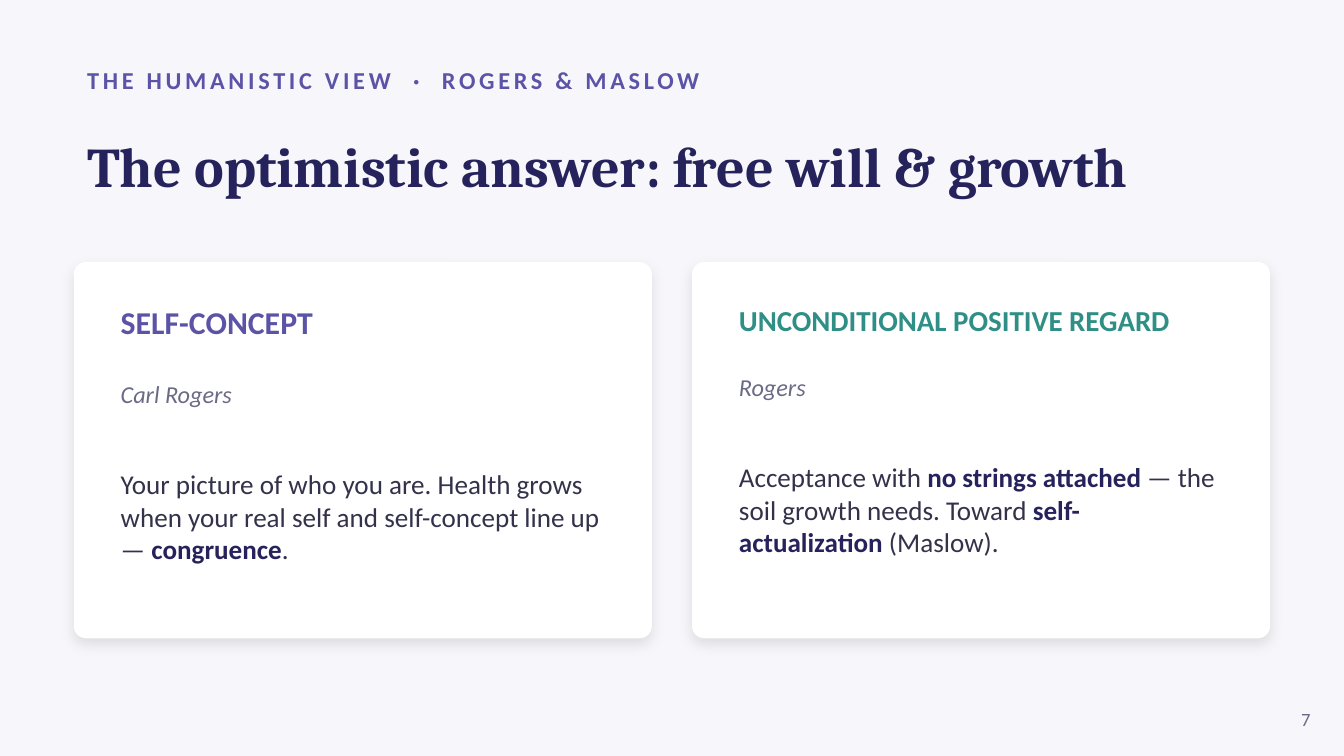
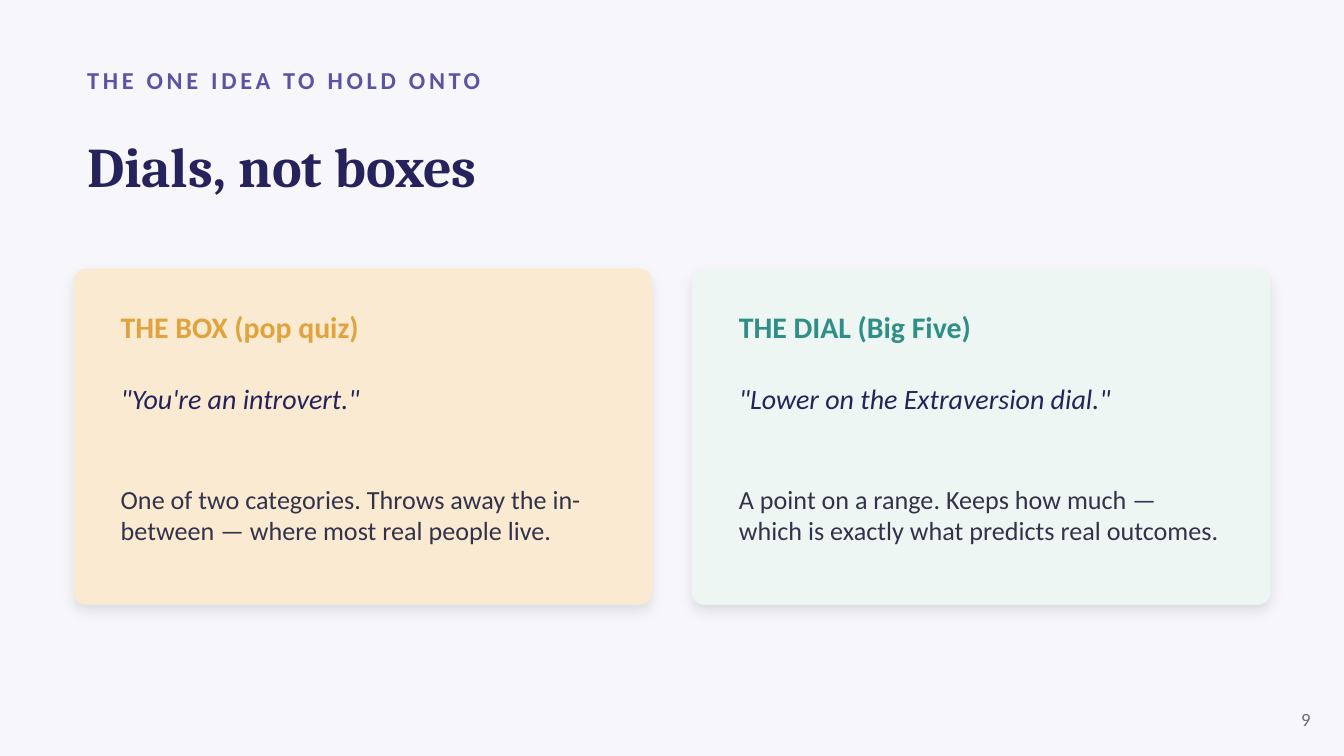
from dataclasses import dataclass

from lxml import etree
from pptx import Presentation
from pptx.dml.color import RGBColor
from pptx.enum.shapes import MSO_SHAPE
from pptx.enum.text import MSO_ANCHOR, PP_ALIGN
from pptx.oxml.ns import qn
from pptx.slide import Slide
from pptx.text.text import TextFrame, _Paragraph
from pptx.util import Emu, Pt

ROUNDED = MSO_SHAPE.ROUNDED_RECTANGLE
TOP, MIDDLE = MSO_ANCHOR.TOP, MSO_ANCHOR.MIDDLE
LEFT, RIGHT = PP_ALIGN.LEFT, PP_ALIGN.RIGHT

BACKGROUND = RGBColor(0xF7, 0xF7, 0xFB)
WHITE = RGBColor(0xFF, 0xFF, 0xFF)
NAVY = RGBColor(0x26, 0x23, 0x5C)
INK = RGBColor(0x33, 0x32, 0x4A)
GREY = RGBColor(0x6B, 0x6A, 0x86)
PURPLE = RGBColor(0x5B, 0x53, 0xA6)
TEAL = RGBColor(0x2F, 0x8F, 0x86)
AMBER = RGBColor(0xE0, 0xA3, 0x3E)
CREAM = RGBColor(0xFB, 0xEA, 0xD2)
MINT = RGBColor(0xEE, 0xF6, 0xF4)

BODY_FONT, TITLE_FONT = "Calibri", "Cambria"
LINE_HEIGHT = 1.22
EYEBROW_TRACKING, SEPARATOR_TRACKING = 2, 7

EMU_PER_PX = 4572
SLIDE_WIDTH, SLIDE_HEIGHT = 2000, 1125
MARGIN = 110
CARD_WIDTH, CARD_GAP, CARD_RADIUS, CARD_PADDING = 860, 60, 18, 50


@dataclass(frozen=True)
class Style:
    size: float
    color: RGBColor
    font: str = BODY_FONT
    bold: bool = False
    italic: bool = False
    tracking: float = 0


@dataclass(frozen=True)
class Span:
    text: str
    style: Style


@dataclass(frozen=True)
class Box:
    left: int
    top: int
    width: int
    height: int

    def emu(self) -> tuple[Emu, ...]:
        return tuple(Emu(px * EMU_PER_PX) for px in (self.left, self.top, self.width, self.height))


@dataclass(frozen=True)
class Card:
    fill: RGBColor
    heading: Span
    subtitle: Span
    body: list[Span]


@dataclass(frozen=True)
class Page:
    number: int
    eyebrow: list[Span]
    title: str
    cards_top: int
    cards_height: int
    text_height: int
    cards: list[Card]


EYEBROW = Style(13, PURPLE, bold=True, tracking=EYEBROW_TRACKING)
SEPARATOR = Style(13, PURPLE, bold=True, tracking=SEPARATOR_TRACKING)
TITLE = Style(30, NAVY, TITLE_FONT, bold=True)
PAGE_NUMBER = Style(10, GREY)
AUTHOR = Style(13, GREY, italic=True)
QUOTE = Style(15, NAVY, italic=True)
CONCEPT = Style(14.5, INK)
KEY_TERM = Style(14.5, NAVY, bold=True)
EXPLANATION = Style(14, INK)

EYEBROW_BOX = Box(MARGIN, 84, 1800, 70)
TITLE_BOX = Box(MARGIN, 156, 1780, 180)
NUMBER_BOX = Box(1870, 1040, 100, 60)

PAGES = [
    Page(
        7,
        [Span("THE HUMANISTIC VIEW", EYEBROW), Span(" ·", SEPARATOR), Span(" ROGERS & MASLOW", EYEBROW)],
        "The optimistic answer: free will & growth",
        390, 560, 490,
        [
            Card(
                WHITE,
                Span("SELF-CONCEPT", Style(17, PURPLE, bold=True)),
                Span("Carl Rogers", AUTHOR),
                [
                    Span("Your picture of who you are. Health grows when your real self "
                         "and self-concept line up — ", CONCEPT),
                    Span("congruence", KEY_TERM),
                    Span(".", CONCEPT),
                ],
            ),
            Card(
                WHITE,
                Span("UNCONDITIONAL POSITIVE REGARD", Style(15.5, TEAL, bold=True)),
                Span("Rogers", AUTHOR),
                [
                    Span("Acceptance with ", CONCEPT),
                    Span("no strings attached", KEY_TERM),
                    Span(" — the soil growth needs. Toward ", CONCEPT),
                    Span("self-actualization", KEY_TERM),
                    Span(" (Maslow).", CONCEPT),
                ],
            ),
        ],
    ),
    Page(
        9,
        [Span("THE ONE IDEA TO HOLD ONTO", EYEBROW)],
        "Dials, not boxes",
        400, 500, 420,
        [
            Card(
                CREAM,
                Span("THE BOX (pop quiz)", Style(16, AMBER, bold=True)),
                Span('"You\'re an introvert."', QUOTE),
                [Span("One of two categories. Throws away the in-between — "
                      "where most real people live.", EXPLANATION)],
            ),
            Card(
                MINT,
                Span("THE DIAL (Big Five)", Style(16, TEAL, bold=True)),
                Span('"Lower on the Extraversion dial."', QUOTE),
                [Span("A point on a range. Keeps how much — "
                      "which is exactly what predicts real outcomes.", EXPLANATION)],
            ),
        ],
    ),
]


def add_spans(paragraph: _Paragraph, spans: list[Span]) -> None:
    for span in spans:
        run = paragraph.add_run()
        run.text = span.text
        style = span.style
        run.font.name = style.font
        run.font.size = Pt(style.size)
        run.font.bold = style.bold
        run.font.italic = style.italic
        run.font.color.rgb = style.color
        if style.tracking:
            run._r.get_or_add_rPr().set("spc", str(round(style.tracking * 100)))


def add_text_box(slide: Slide, box: Box, anchor: MSO_ANCHOR) -> TextFrame:
    frame = slide.shapes.add_textbox(*box.emu()).text_frame
    frame.word_wrap = True
    frame.vertical_anchor = anchor
    return frame


def add_line(slide: Slide, box: Box, spans: list[Span], alignment: PP_ALIGN = LEFT) -> None:
    paragraph = add_text_box(slide, box, MIDDLE).paragraphs[0]
    paragraph.alignment = alignment
    add_spans(paragraph, spans)


def add_panel(slide: Slide, box: Box, fill: RGBColor) -> None:
    shape = slide.shapes.add_shape(ROUNDED, *box.emu())
    shape.adjustments[0] = CARD_RADIUS / box.height
    shape.fill.solid()
    shape.fill.fore_color.rgb = fill
    shape.line.fill.background()
    shape.shadow.inherit = False
    effects = shape._element.spPr.find(qn("a:effectLst"))
    shadow = etree.SubElement(
        effects, qn("a:outerShdw"), blurRad=str(Pt(7)), dist=str(Pt(3)),
        dir="5400000", algn="bl", rotWithShape="0",
    )
    color = etree.SubElement(shadow, qn("a:srgbClr"), val="000000")
    etree.SubElement(color, qn("a:alpha"), val="10000")


def add_card_text(slide: Slide, box: Box, card: Card) -> None:
    frame = add_text_box(slide, box, TOP)
    heading = frame.paragraphs[0]
    add_spans(heading, [card.heading])
    heading.space_after = Pt(card.heading.style.size * LINE_HEIGHT)
    subtitle = frame.add_paragraph()
    add_spans(subtitle, [card.subtitle])
    subtitle.space_after = Pt(card.subtitle.style.size * LINE_HEIGHT * 2)
    add_spans(frame.add_paragraph(), card.body)


def add_page(presentation: Presentation, page: Page) -> None:
    slide = presentation.slides.add_slide(presentation.slide_layouts[6])
    slide.background.fill.solid()
    slide.background.fill.fore_color.rgb = BACKGROUND
    add_line(slide, EYEBROW_BOX, page.eyebrow)
    add_line(slide, TITLE_BOX, [Span(page.title, TITLE)])
    lefts = [MARGIN + index * (CARD_WIDTH + CARD_GAP) for index in range(len(page.cards))]
    for left, card in zip(lefts, page.cards):
        add_panel(slide, Box(left, page.cards_top, CARD_WIDTH, page.cards_height), card.fill)
    for left, card in zip(lefts, page.cards):
        text_box = Box(left + CARD_PADDING, page.cards_top + CARD_PADDING,
                       CARD_WIDTH - 2 * CARD_PADDING, page.text_height)
        add_card_text(slide, text_box, card)
    add_line(slide, NUMBER_BOX, [Span(str(page.number), PAGE_NUMBER)], RIGHT)


def main() -> None:
    presentation = Presentation()
    presentation.slide_width = Emu(SLIDE_WIDTH * EMU_PER_PX)
    presentation.slide_height = Emu(SLIDE_HEIGHT * EMU_PER_PX)
    for page in PAGES:
        add_page(presentation, page)
    presentation.save("out.pptx")


if __name__ == "__main__":
    main()
